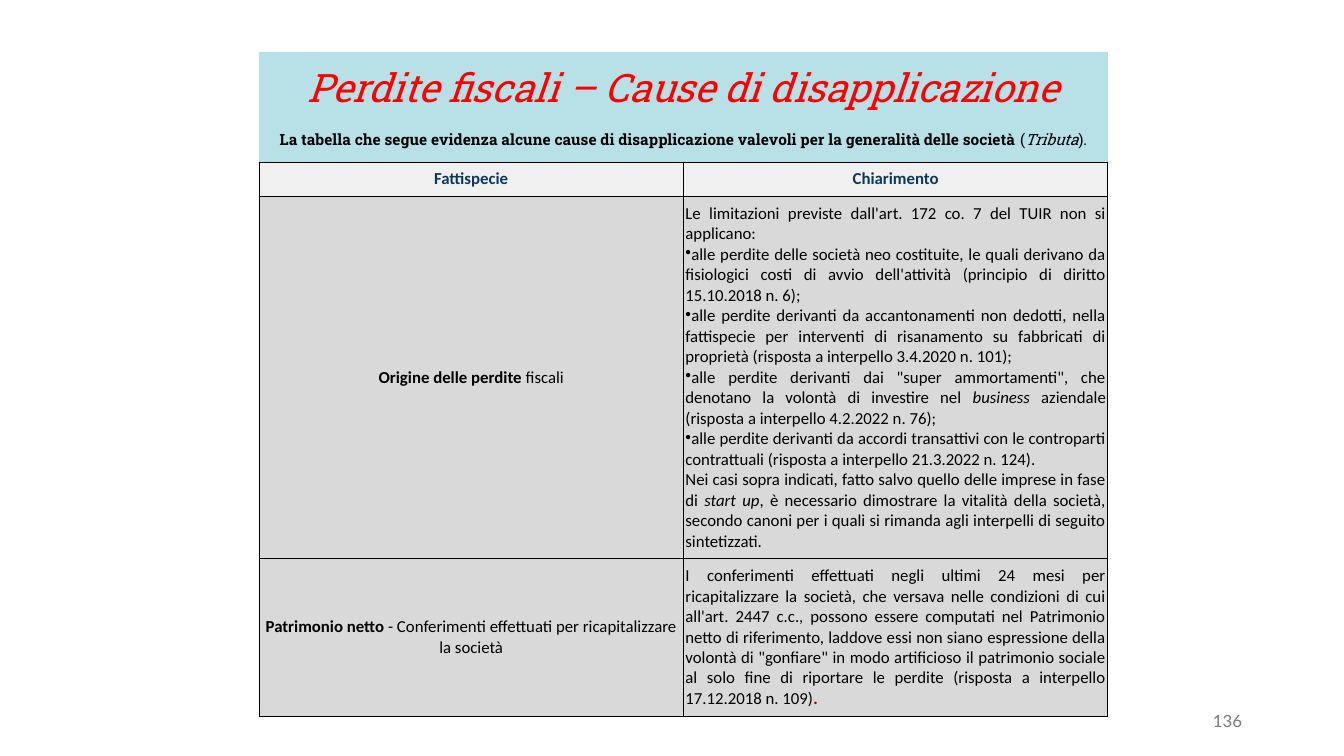
from dataclasses import dataclass

from lxml.etree import SubElement
from pptx import Presentation
from pptx.dml.color import RGBColor
from pptx.enum.text import MSO_ANCHOR as Anchor, MSO_AUTO_SIZE as Fit, PP_ALIGN as Align
from pptx.oxml import parse_xml
from pptx.oxml.ns import nsdecls, qn
from pptx.util import Emu, Pt

SCALE = 914400 / 100.8


@dataclass(frozen=True)
class Theme:
    panel: str = "B7E1E7"
    title: str = "FF0000"
    ink: str = "000000"
    head: str = "0E385B"
    top: str = "F0F0F0"
    cell: str = "D9D9D9"
    stop: str = "990000"
    page: str = "797979"
    slab: str = "Roboto Slab"
    sans: str = "Calibri"
    foot: str = "Lato"
    large: int = 28
    base: int = 12
    small: int = 11


LOOK = Theme()

TITLE = "Perdite fiscali – Cause di disapplicazione"
LEAD = [
    ("La tabella che segue evidenza alcune cause di disapplicazione valevoli "
     "per la generalità delle società ", "b"),
    ("(", ""), ("Tributa", "i"), (").", ""),
]
HEADS = ["Fattispecie", "Chiarimento"]
ORIGIN = [("Origine delle perdite ", "b"), ("fiscali", "")]
LIMITS = [
    [("Le limitazioni previste dall'art. 172 co. 7 del TUIR non si applicano:", "")],
    [("alle perdite delle società neo costituite, le quali derivano da fisiologici "
      "costi di avvio dell'attività (principio di diritto 15.10.2018 n. 6);", "•")],
    [("alle perdite derivanti da accantonamenti non dedotti, nella fattispecie per "
      "interventi di risanamento su fabbricati di proprietà "
      "(risposta a interpello 3.4.2020 n. 101);", "•")],
    [('alle perdite derivanti dai "super ammortamenti", che denotano la volontà '
      "di investire nel ", "•"), ("business", "i"),
     (" aziendale (risposta a interpello 4.2.2022 n. 76);", "")],
    [("alle perdite derivanti da accordi transattivi con le controparti contrattuali "
      "(risposta a interpello 21.3.2022 n. 124).", "•")],
    [("Nei casi sopra indicati, fatto salvo quello delle imprese in fase di ", ""),
     ("start up", "i"),
     (", è necessario dimostrare la vitalità della società, secondo canoni per i quali "
      "si rimanda agli interpelli di seguito sintetizzati.", "")],
]
EQUITY = [("Patrimonio netto ", "b"),
          ("- Conferimenti effettuati per ricapitalizzare la società", "")]
GRANTS = [[
    ("I conferimenti effettuati negli ultimi 24 mesi per ricapitalizzare la società, "
     "che versava nelle condizioni di cui all'art. 2447 c.c., possono essere computati "
     "nel Patrimonio netto di riferimento, laddove essi non siano espressione della "
     'volontà di "gonfiare" in modo artificioso il patrimonio sociale al solo fine di '
     "riportare le perdite (risposta a interpello 17.12.2018 n. 109)", ""),
    (".", "b!"),
]]


def px(num):
    return Emu(round(num * SCALE))


def rgb(code):
    return RGBColor.from_string(code)


def paint(item, code):
    item.fill.solid()
    item.fill.fore_color.rgb = rgb(code)


def place(item, box):
    item.left, item.top, item.width, item.height = map(px, box)


def write(para, parts, face, size, tint, align):
    para.alignment = align
    para.space_before = Pt(0)
    for text, marks in parts:
        run = para.add_run()
        run.text = text
        font = run.font
        font.name, font.size = face, Pt(size)
        font.bold, font.italic = "b" in marks, "i" in marks
        font.color.rgb = rgb(LOOK.stop if "!" in marks else tint)
        if "•" in marks:
            props = para._p.get_or_add_pPr()
            props.set("marL", "0")
            props.set("indent", "0")
            SubElement(props, qn("a:buChar")).set("char", "•")


def border(cell):
    props = cell._tc.get_or_add_tcPr()
    for spot, side in enumerate("LRTB"):
        props.insert(spot, parse_xml(
            f'<a:ln{side} {nsdecls("a")} w="{Pt(0.75)}"><a:solidFill>'
            f'<a:srgbClr val="{LOOK.ink}"/></a:solidFill></a:ln{side}>'))


def add_panel(shape, box, parts, size, tint, space, anchor):
    place(shape, box)
    paint(shape, LOOK.panel)
    frame = shape.text_frame
    frame.auto_size = Fit.NONE
    frame.word_wrap = True
    frame.vertical_anchor = anchor
    para = frame.paragraphs[0]
    write(para, parts, LOOK.slab, size, tint, Align.CENTER)
    para.line_spacing = space


def fill_cell(cell, lines, tint, back, align):
    paint(cell, back)
    border(cell)
    cell.margin_left = cell.margin_right = px(2)
    cell.margin_top = cell.margin_bottom = px(7)
    cell.vertical_anchor = Anchor.MIDDLE
    frame = cell.text_frame
    for spot, parts in enumerate(lines):
        para = frame.add_paragraph() if spot else frame.paragraphs[0]
        write(para, parts, LOOK.sans, LOOK.base, tint, align)


def add_grid(slide, box, highs):
    grid = slide.shapes.add_table(len(highs), len(HEADS), *map(px, box)).table
    grid.first_row = grid.horz_banding = False
    for row, high in zip(grid.rows, highs):
        row.height = px(high)
    for spot, text in enumerate(HEADS):
        fill_cell(grid.cell(0, spot), [[(text, "b")]], LOOK.head, LOOK.top, Align.CENTER)
    for row, (case, note) in enumerate([(ORIGIN, LIMITS), (EQUITY, GRANTS)], 1):
        fill_cell(grid.cell(row, 0), [case], LOOK.ink, LOOK.cell, Align.CENTER)
        fill_cell(grid.cell(row, 1), note, LOOK.ink, LOOK.cell, Align.JUSTIFY)


def add_page(slide, box, text):
    frame = slide.shapes.add_textbox(*map(px, box)).text_frame
    frame.word_wrap = True
    frame.vertical_anchor = Anchor.MIDDLE
    write(frame.paragraphs[0], [(text, "")], LOOK.foot, LOOK.base, LOOK.page, Align.RIGHT)


def add_slide(deck, box):
    slide = deck.slides.add_slide(deck.slide_layouts[0])
    left, top, wide, high = box
    band, lead = 64, 110
    rows = [34, 362, 156]
    add_panel(slide.shapes.title, (left, top, wide, band), [(TITLE, "i")],
              LOOK.large, LOOK.title, 0.9, Anchor.BOTTOM)
    add_panel(slide.placeholders[1], (left, top + band, wide, high - band), LEAD,
              LOOK.small, LOOK.ink, 1.5, Anchor.TOP)
    add_grid(slide, (left, top + lead, wide, sum(rows)), rows)
    add_page(slide, (left + 691, top + 649, 302, 40), "136")


def main():
    deck = Presentation()
    deck.slide_width, deck.slide_height = px(1344), px(756)
    add_slide(deck, (259, 52, 849, 652))
    deck.save("out.pptx")


if __name__ == "__main__":
    main()
